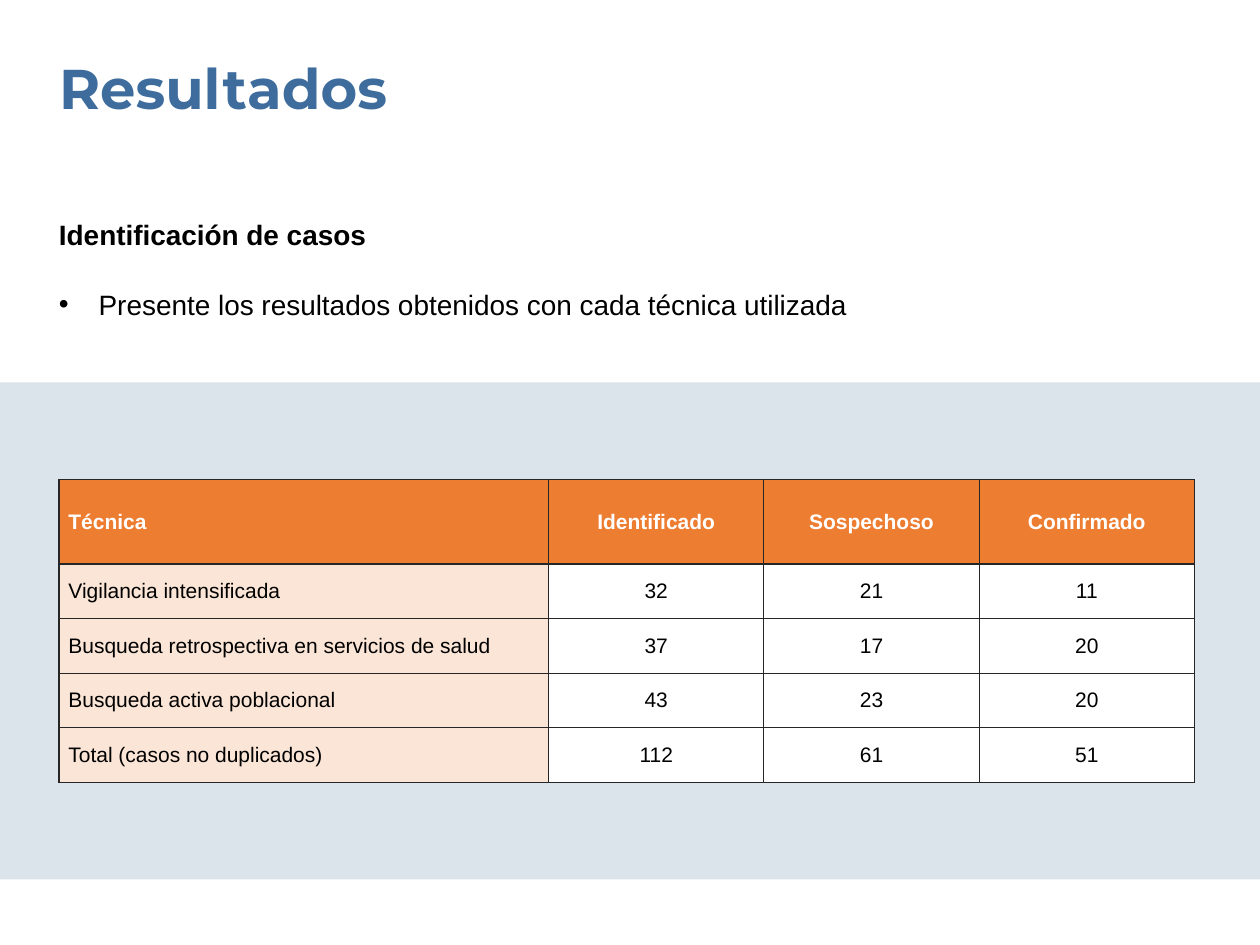
from lxml import etree
from pptx import Presentation
from pptx.dml.color import RGBColor
from pptx.enum.shapes import MSO_SHAPE as Shape
from pptx.enum.text import MSO_ANCHOR as Anchor, MSO_AUTO_SIZE as AutoSize, PP_ALIGN as Align
from pptx.oxml import parse_xml
from pptx.oxml.ns import nsdecls, qn
from pptx.util import Cm, Pt

WHITE = RGBColor(0xFF, 0xFF, 0xFF)
BLACK = RGBColor(0x00, 0x00, 0x00)
BLUE = RGBColor(0x3D, 0x6C, 0x9D)
PALE_BLUE = RGBColor(0xDB, 0xE4, 0xEA)
ORANGE = RGBColor(0xED, 0x7D, 0x31)
PALE_ORANGE = RGBColor(0xFB, 0xE5, 0xD6)
BORDER = RGBColor(0x26, 0x26, 0x26)

SLIDE_WIDTH, SLIDE_HEIGHT = Cm(25.4), Cm(19.05)
MARGIN = Cm(1.19)

TITLE_FORMAT = {"name": "Montserrat", "size": Pt(32), "bold": True}
HEADING_FORMAT = {"name": "Arial", "size": Pt(16), "bold": True}
BULLET_FORMAT = {**HEADING_FORMAT, "bold": False}
HEADER_FORMAT = {"name": "Arial", "size": Pt(12), "bold": True}
CELL_FORMAT = {**HEADER_FORMAT, "bold": False}

COLUMN_WIDTHS = [Cm(9.87)] + [Cm(4.34)] * 3
HEADER_HEIGHT, ROW_HEIGHT = Cm(1.7), Cm(1.1)
CASES = [
    ("Técnica", "Identificado", "Sospechoso", "Confirmado"),
    ("Vigilancia intensificada", 32, 21, 11),
    ("Busqueda retrospectiva en servicios de salud", 37, 17, 20),
    ("Busqueda activa poblacional", 43, 23, 20),
    ("Total (casos no duplicados)", 112, 61, 51),
]


def set_values(target, values):
    for name, value in values.items():
        setattr(target, name, value)


def write(paragraph, text, font_format, color, alignment=Align.LEFT):
    paragraph.alignment = alignment
    run = paragraph.add_run()
    run.text = text
    set_values(run.font, font_format)
    run.font.color.rgb = color


def prepare_frame(frame):
    """Make the text start exactly at the corner of its box."""
    set_values(frame, {
        "word_wrap": True, "auto_size": AutoSize.NONE, "vertical_anchor": Anchor.TOP,
        "margin_left": 0, "margin_right": 0, "margin_top": 0, "margin_bottom": 0,
    })


def place_title(slide, left, top, width, height):
    title = slide.shapes.title
    set_values(title, {"left": left, "top": top, "width": width, "height": height})
    prepare_frame(title.text_frame)
    write(title.text_frame.paragraphs[0], "Resultados", TITLE_FORMAT, BLUE)


def add_bullet(paragraph, indent):
    properties = paragraph._p.get_or_add_pPr()
    properties.set("marL", str(indent))
    properties.set("indent", str(-indent))
    etree.SubElement(properties, qn("a:buFont")).set("typeface", "Arial")
    etree.SubElement(properties, qn("a:buChar")).set("char", "•")


def add_introduction(slide, left, top, width, height):
    frame = slide.shapes.add_textbox(left, top, width, height).text_frame
    prepare_frame(frame)
    write(frame.paragraphs[0], "Identificación de casos", HEADING_FORMAT, BLACK)
    bullet = frame.add_paragraph()
    bullet.space_before = Pt(20.5)
    write(bullet, "Presente los resultados obtenidos con cada técnica utilizada",
          BULLET_FORMAT, BLACK)
    add_bullet(bullet, Cm(0.8))


def add_band(slide, left, top, width, height):
    band = slide.shapes.add_shape(Shape.RECTANGLE, left, top, width, height)
    band.shadow.inherit = False
    band.fill.solid()
    band.fill.fore_color.rgb = PALE_BLUE
    band.line.fill.background()


def add_borders(cell):
    properties = cell._tc.get_or_add_tcPr()
    for position, side in enumerate("LRTB"):
        properties.insert(position, parse_xml(
            f'<a:ln{side} {nsdecls("a")} w="{Pt(0.75)}"><a:solidFill>'
            f'<a:srgbClr val="{BORDER}"/></a:solidFill></a:ln{side}>'))


def fill_cell(cell, value, is_header, is_first):
    set_values(cell, {
        "vertical_anchor": Anchor.MIDDLE, "margin_left": Cm(0.19),
        "margin_right": Cm(0.19), "margin_top": Cm(0.13), "margin_bottom": Cm(0.13),
    })
    cell.fill.solid()
    body_color = PALE_ORANGE if is_first else WHITE
    cell.fill.fore_color.rgb = ORANGE if is_header else body_color
    add_borders(cell)
    write(cell.text_frame.paragraphs[0], str(value),
          HEADER_FORMAT if is_header else CELL_FORMAT,
          WHITE if is_header else BLACK,
          Align.LEFT if is_first else Align.CENTER)


def add_case_table(slide, left, top):
    heights = [HEADER_HEIGHT] + [ROW_HEIGHT] * (len(CASES) - 1)
    table = slide.shapes.add_table(len(CASES), len(COLUMN_WIDTHS), left, top,
                                   sum(COLUMN_WIDTHS), sum(heights)).table
    for column, width in zip(table.columns, COLUMN_WIDTHS):
        column.width = width
    for row_index, (row, height, values) in enumerate(zip(table.rows, heights, CASES)):
        row.height = height
        for column_index, (cell, value) in enumerate(zip(row.cells, values)):
            fill_cell(cell, value, row_index == 0, column_index == 0)


def main():
    presentation = Presentation()
    presentation.slide_width, presentation.slide_height = SLIDE_WIDTH, SLIDE_HEIGHT
    slide = presentation.slides.add_slide(presentation.slide_layouts.get_by_name("Title Only"))
    add_band(slide, 0, Cm(7.71), SLIDE_WIDTH, Cm(10.02))
    place_title(slide, MARGIN, Cm(1.07), Cm(19.08), Cm(1.37))
    add_introduction(slide, MARGIN, Cm(4.39), Cm(16.85), Cm(2.06))
    add_case_table(slide, MARGIN, Cm(9.67))
    presentation.save("out.pptx")


if __name__ == "__main__":
    main()
